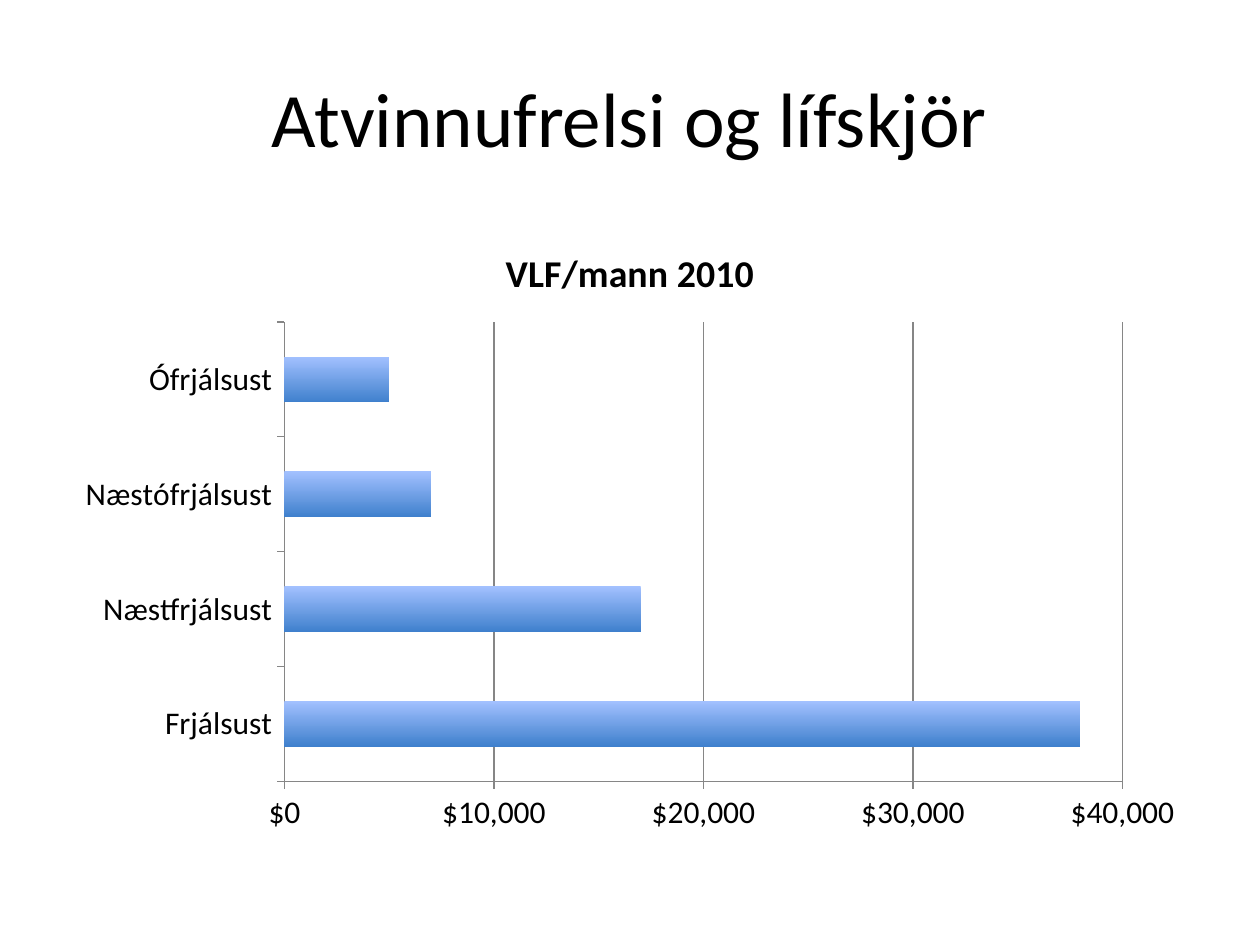
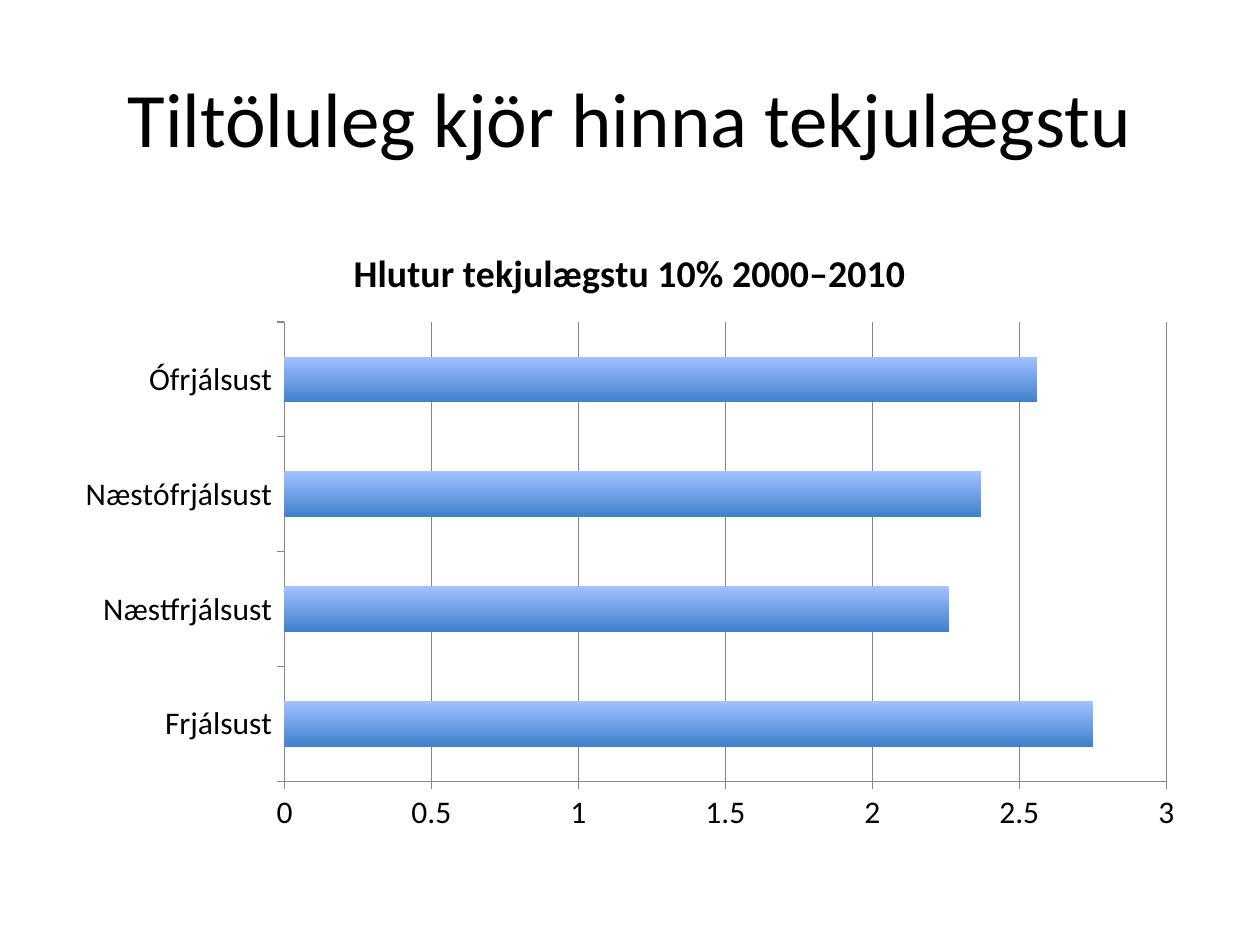
"""Builds two slides with bar charts on economic freedom and living standards."""
from pptx import Presentation
from pptx.chart.data import CategoryChartData
from pptx.dml.color import RGBColor
from pptx.enum.chart import XL_CHART_TYPE, XL_TICK_MARK
from pptx.enum.text import MSO_ANCHOR, PP_ALIGN
from pptx.util import Inches, Pt

BAR_CLUSTERED = XL_CHART_TYPE.BAR_CLUSTERED
OUTSIDE, NO_TICK = XL_TICK_MARK.OUTSIDE, XL_TICK_MARK.NONE
MIDDLE, CENTER = MSO_ANCHOR.MIDDLE, PP_ALIGN.CENTER

BLACK = RGBColor(0x00, 0x00, 0x00)
AXIS_GRAY = RGBColor(0x86, 0x86, 0x86)
BAR_LIGHT = RGBColor(0xA3, 0xC1, 0xFF)
BAR_DARK = RGBColor(0x3F, 0x80, 0xCD)

FONT_NAME = "Calibri"
TITLE_FONT = {"name": FONT_NAME, "size": Pt(44), "bold": False}
CHART_FONT = {"name": FONT_NAME, "size": Pt(18), "bold": False}
CHART_TITLE_FONT = {"name": FONT_NAME, "size": Pt(21.6), "bold": True}

FREEDOM_GROUPS = ["Frjálsust", "Næstfrjálsust", "Næstófrjálsust", "Ófrjálsust"]
SLIDES = [
    {"title": "Atvinnufrelsi og lífskjör", "measure": "VLF/mann 2010",
     "values": [38000, 17000, 7000, 5000], "top": 40000, "step": 10000,
     "format": '"$"#,##0'},
    {"title": "Tiltöluleg kjör hinna tekjulægstu",
     "measure": "Hlutur tekjulægstu 10% 2000–2010",
     "values": [2.75, 2.26, 2.37, 2.56], "top": 3, "step": 0.5,
     "format": "General"},
]


def style_font(font, style):
    for attribute, value in style.items():
        setattr(font, attribute, value)
    font.color.rgb = BLACK


deck = Presentation()
deck.slide_width, deck.slide_height = Inches(10), Inches(7.5)

for content in SLIDES:
    page = deck.slides.add_slide(deck.slide_layouts[6])

    box = page.shapes.add_textbox(Inches(0.5), Inches(0.3), Inches(9), Inches(1.25))
    frame = box.text_frame
    frame.word_wrap = True
    frame.vertical_anchor = MIDDLE
    para = frame.paragraphs[0]
    para.alignment = CENTER
    span = para.add_run()
    span.text = content["title"]
    style_font(span.font, TITLE_FONT)

    data = CategoryChartData(number_format=content["format"])
    data.categories = FREEDOM_GROUPS
    data.add_series(content["measure"], content["values"])
    chart = page.shapes.add_chart(
        BAR_CLUSTERED, Inches(0.5), Inches(1.75), Inches(9), Inches(4.95), data
    ).chart
    style_font(chart.font, CHART_FONT)
    chart.has_legend = False
    chart.has_title = True
    chart.chart_title.include_in_layout = False
    heading = chart.chart_title.text_frame.paragraphs[0].add_run()
    heading.text = content["measure"]
    style_font(heading.font, CHART_TITLE_FONT)

    plot = chart.plots[0]
    plot.gap_width = 150
    plot.vary_by_categories = False
    fill = plot.series[0].format.fill
    fill.gradient()
    fill.gradient_angle = 270
    for stop, color in zip(fill.gradient_stops, (BAR_LIGHT, BAR_DARK)):
        stop.color.rgb = color

    amounts = chart.value_axis
    amounts.minimum_scale, amounts.maximum_scale = 0, content["top"]
    amounts.major_unit = content["step"]
    amounts.has_major_gridlines = True
    amounts.tick_labels.number_format = content["format"]
    amounts.tick_labels.number_format_is_linked = False
    for axis in (chart.category_axis, amounts):
        axis.major_tick_mark, axis.minor_tick_mark = OUTSIDE, NO_TICK
    for part in (chart.category_axis, amounts, amounts.major_gridlines):
        part.format.line.color.rgb = AXIS_GRAY
        part.format.line.width = Pt(0.75)

deck.save("out.pptx")
